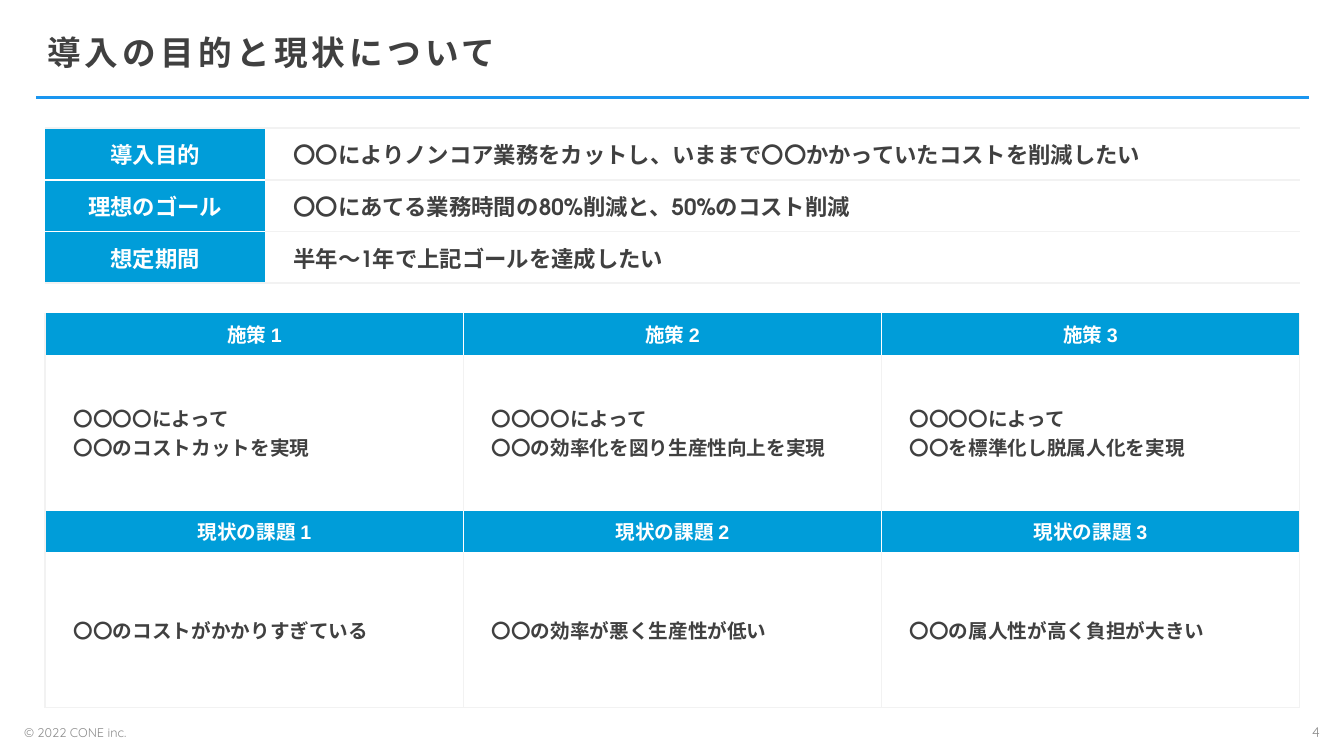
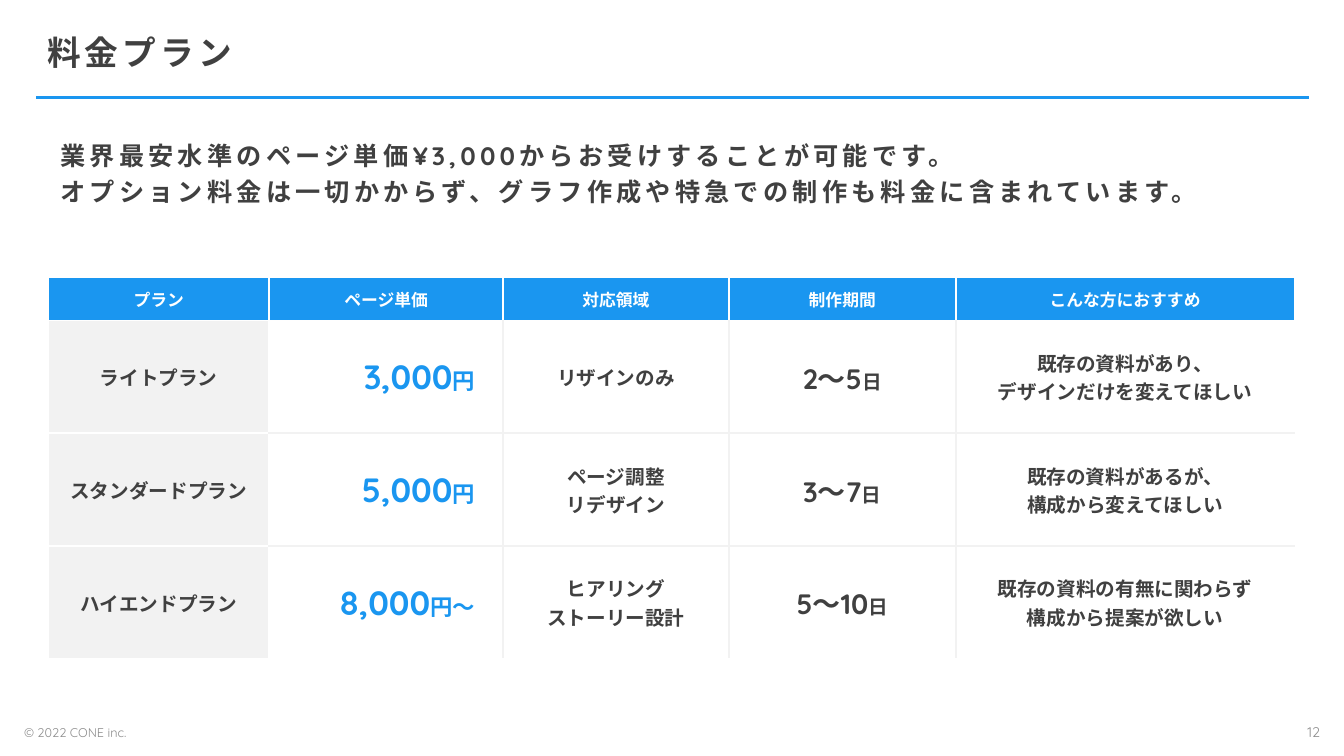
from dataclasses import dataclass

from lxml import etree
from pptx import Presentation
from pptx import util as u
from pptx.dml.color import RGBColor
from pptx.enum import lang, shapes, text
from pptx.oxml import ns


@dataclass(frozen=True)
class Theme:
    ink: str = "404040"
    accent: str = "1A96F0"
    band: str = "009DD9"
    pale: str = "F2F2F2"
    white: str = "FFFFFF"
    muted: str = "8C8C8C"
    font: str = "Quicksand"
    goal_font: str = "TeX Gyre Adventor"
    measure_font: str = "Arial"
    title: int = 24
    lead: int = 18
    large: int = 20
    goal: int = 16
    body: int = 14
    header: int = 12
    page: int = 10
    footer: int = 9
    tracking: int = 3
    rule: float = 1.5
    indent: float = 0.28


THEME = Theme()
LEFT, CENTER, RIGHT = text.PP_ALIGN.LEFT, text.PP_ALIGN.CENTER, text.PP_ALIGN.RIGHT
MIDDLE, TOP = text.MSO_ANCHOR.MIDDLE, text.MSO_ANCHOR.TOP


@dataclass
class CellStyle:
    fill: str = THEME.white
    color: str = THEME.ink
    size: int = THEME.body
    font: str = THEME.font
    align: int = CENTER
    indent_left: float = 0.1
    indent_right: float = 0.1
    edges: tuple = (None, None, None, None)


def format_run(run, size, color, font, bold=True, tracking=0):
    run.font.size = u.Pt(size)
    run.font.name = font
    run.font.bold = bold
    run.font.color.rgb = RGBColor.from_string(color)
    run.font.language_id = lang.MSO_LANGUAGE_ID.JAPANESE
    if tracking:
        run.font._element.set("spc", str(tracking * 100))


def add_text(slide, box, content, size, color=THEME.ink, bold=False, align=LEFT,
             anchor=MIDDLE, tracking=0, inset_top=0.05, spacing=None, gap=0):
    shape = slide.shapes.add_textbox(*map(u.Inches, box))
    frame = shape.text_frame
    frame.word_wrap = True
    frame.vertical_anchor = anchor
    frame.margin_top = u.Inches(inset_top)
    frame.text = content
    for index, paragraph in enumerate(frame.paragraphs):
        paragraph.alignment = align
        if spacing:
            paragraph.line_spacing = spacing
        if gap and index:
            paragraph.space_before = u.Pt(gap)
        for run in paragraph.runs:
            format_run(run, size, color, THEME.font, bold, tracking)


def add_frame(presentation, title, number):
    slide = presentation.slides.add_slide(presentation.slide_layouts[6])
    rule = slide.shapes.add_connector(
        shapes.MSO_CONNECTOR.STRAIGHT,
        u.Inches(0.36), u.Inches(0.97), u.Inches(12.98), u.Inches(0.97))
    rule.line.color.rgb = RGBColor.from_string(THEME.accent)
    rule.line.width = u.Pt(2)
    etree.SubElement(rule._element.spPr, ns.qn("a:effectLst"))
    add_text(slide, (0.37, 0.21, 12.52, 0.63), title, THEME.title, bold=True,
             tracking=THEME.tracking, inset_top=0.08, spacing=0.9)
    add_text(slide, (0.14, 7.13, 3, 0.27), "© 2022 CONE inc.", THEME.footer, THEME.muted)
    add_text(slide, (10.19, 7.13, 3, 0.27), str(number), THEME.page, THEME.muted, align=RIGHT)
    return slide


def draw_edges(cell, colors):
    properties = cell._tc.get_or_add_tcPr()
    for side, color in zip("LRTB", colors):
        line = etree.SubElement(properties, ns.qn(f"a:ln{side}"))
        if color:
            line.set("w", str(u.Pt(THEME.rule)))
            fill = etree.SubElement(line, ns.qn("a:solidFill"))
            etree.SubElement(fill, ns.qn("a:srgbClr")).set("val", color)
        else:
            line.set("w", "0")
            etree.SubElement(line, ns.qn("a:noFill"))


def fill_cell(cell, content, style):
    draw_edges(cell, style.edges)
    cell.fill.solid()
    cell.fill.fore_color.rgb = RGBColor.from_string(style.fill)
    cell.vertical_anchor = MIDDLE
    cell.margin_left = u.Inches(style.indent_left)
    cell.margin_right = u.Inches(style.indent_right)
    if isinstance(content, str):
        cell.text = content
        sizes = [style.size]
    else:
        amount, unit, unit_size = content
        paragraph = cell.text_frame.paragraphs[0]
        for part in (amount, unit):
            paragraph.add_run().text = part
        sizes = [style.size, unit_size]
    for paragraph in cell.text_frame.paragraphs:
        paragraph.alignment = style.align
        for run, size in zip(paragraph.runs, sizes):
            format_run(run, size, style.color, style.font)


def add_table(slide, box, widths, heights, rows, style_at):
    table = slide.shapes.add_table(len(rows), len(widths), *map(u.Inches, box)).table
    table.first_row = False
    table.horz_banding = False
    for column, width in zip(table.columns, widths):
        column.width = u.Inches(width)
    for row, height in zip(table.rows, heights):
        row.height = u.Inches(height)
    for r, contents in enumerate(rows):
        for c, content in enumerate(contents):
            fill_cell(table.cell(r, c), content, style_at(r, c))


def add_goals(slide, box):
    rows = [
        ("導入目的", "〇〇によりノンコア業務をカットし、いままで〇〇かかっていたコストを削減したい"),
        ("理想のゴール", "〇〇にあてる業務時間の80%削減と、50%のコスト削減"),
        ("想定期間", "半年〜1年で上記ゴールを達成したい"),
    ]
    last = len(rows) - 1

    def style_at(r, c):
        if c == 0:
            top = THEME.white if r else THEME.pale
            bottom = THEME.white if r < last else THEME.pale
            return CellStyle(THEME.band, THEME.white, THEME.goal, THEME.goal_font,
                             edges=(None, None, top, bottom))
        return CellStyle(size=THEME.goal, font=THEME.goal_font, align=LEFT,
                         indent_left=THEME.indent,
                         edges=(None, None, THEME.pale, THEME.pale))

    label_width = 2.18
    add_table(slide, box, [label_width, box[2] - label_width],
              [box[3] / len(rows)] * len(rows), rows, style_at)


def add_measures(slide, box):
    numbers = (1, 2, 3)
    rows = [
        [f"施策 {number}" for number in numbers],
        ["〇〇〇〇によって\n" + result for result in (
            "〇〇のコストカットを実現",
            "〇〇の効率化を図り生産性向上を実現",
            "〇〇を標準化し脱属人化を実現")],
        [f"現状の課題 {number}" for number in numbers],
        ["〇〇のコストがかかりすぎている", "〇〇の効率が悪く生産性が低い", "〇〇の属人性が高く負担が大きい"],
    ]
    last_row, last_column = len(rows) - 1, len(numbers) - 1

    def style_at(r, c):
        if r % 2 == 0:
            left = THEME.white if c else THEME.pale
            right = THEME.white if c < last_column else THEME.pale
            return CellStyle(THEME.band, THEME.white, font=THEME.measure_font,
                             edges=(left, right, None, None))
        bottom = THEME.pale if r == last_row else None
        return CellStyle(font=THEME.measure_font, align=LEFT, indent_left=THEME.indent,
                         edges=(THEME.pale, THEME.pale, None, bottom))

    header = 0.41
    add_table(slide, box, [box[2] / len(numbers)] * len(numbers),
              [header, box[3] / 2 - header] * 2, rows, style_at)


def add_prices(slide, box):
    plans = [
        ("ライトプラン", "3,000", "円", "リザインのみ", "2〜5",
         "既存の資料があり、\nデザインだけを変えてほしい"),
        ("スタンダードプラン", "5,000", "円", "ページ調整\nリデザイン", "3〜7",
         "既存の資料があるが、\n構成から変えてほしい"),
        ("ハイエンドプラン", "8,000", "円〜", "ヒアリング\nストーリー設計", "5〜10",
         "既存の資料の有無に関わらず\n構成から提案が欲しい"),
    ]
    rows = [("プラン", "ページ単価", "対応領域", "制作期間", "こんな方におすすめ")]
    for name, price, unit, scope, days, audience in plans:
        rows.append((name, (price, unit, THEME.goal), scope,
                     (days, "日", THEME.body), audience))
    last_row, last_column = len(rows) - 1, len(rows[0]) - 1

    def style_at(r, c):
        white, pale = THEME.white, THEME.pale
        if r == 0:
            return CellStyle(THEME.accent, white, THEME.header,
                             edges=(white, white, None, white))
        if c == 0:
            return CellStyle(pale, edges=(white,) * 4)
        style = CellStyle(edges=(
            white if c == 1 else pale, white if c == last_column else pale,
            white if r == 1 else pale, white if r == last_row else pale))
        if c == 1:
            style.color, style.size = THEME.accent, THEME.title
            style.align, style.indent_right = RIGHT, THEME.indent
        elif c == 3:
            style.size = THEME.large
        return style

    header = 0.42
    widths = [2.19, 2.32, 2.24, 2.25]
    add_table(slide, box, widths + [box[2] - sum(widths)],
              [header] + [(box[3] - header) / len(plans)] * len(plans), rows, style_at)


def build_purpose_slide(presentation):
    slide = add_frame(presentation, "導入の目的と現状について", 4)
    add_goals(slide, (0.45, 1.27, 12.44, 1.54))
    add_measures(slide, (0.45, 3.11, 12.44, 3.91))


def build_price_slide(presentation):
    slide = add_frame(presentation, "料金プラン", 12)
    lead = ("業界最安水準のページ単価¥3,000からお受けすることが可能です。\n"
            "オプション料金は一切かからず、グラフ作成や特急での制作も料金に含まれています。")
    add_text(slide, (0.5, 1.27, 12.33, 0.91), lead, THEME.lead, bold=True, anchor=TOP,
             tracking=THEME.tracking, inset_top=0.16, spacing=0.9, gap=6)
    add_prices(slide, (0.48, 2.76, 12.36, 3.78))


def main():
    presentation = Presentation()
    presentation.slide_width = u.Inches(13.33)
    presentation.slide_height = u.Inches(7.5)
    build_purpose_slide(presentation)
    build_price_slide(presentation)
    presentation.save("out.pptx")


if __name__ == "__main__":
    main()
